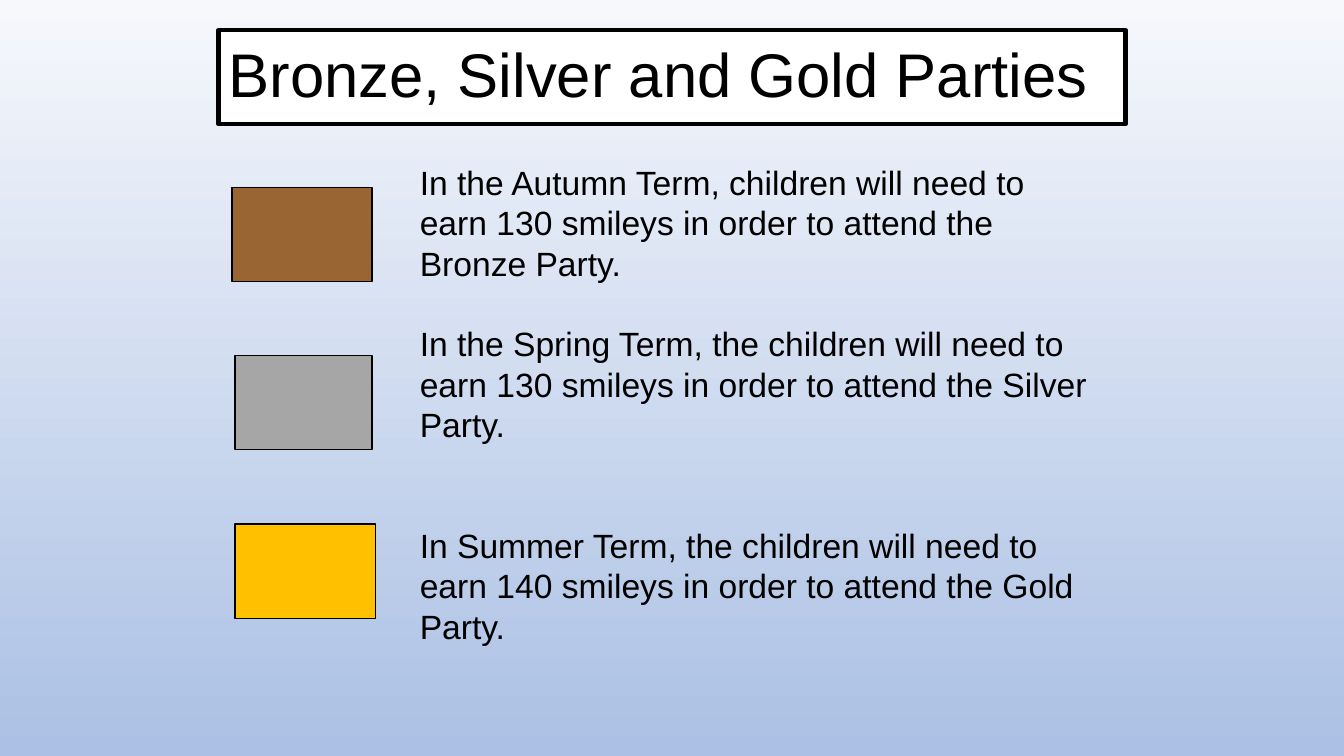
from pptx import Presentation
from pptx import util as u
from pptx.dml.color import RGBColor
from pptx.enum import shapes, text

BLACK = RGBColor(0x00, 0x00, 0x00)
WHITE = RGBColor(0xFF, 0xFF, 0xFF)
BRONZE = RGBColor(0x99, 0x66, 0x33)
SILVER = RGBColor(0xA6, 0xA6, 0xA6)
GOLD = RGBColor(0xFF, 0xC0, 0x00)
SKY_TOP = RGBColor(0xF6, 0xF8, 0xFC)
SKY_BOTTOM = RGBColor(0xAB, 0xC0, 0xE4)

COLUMNS, ROWS = 160, 90
TITLE_ONLY = 5
SWATCH_TOP, SWATCH_PITCH, SWATCH_HEIGHT = 22.3, 20.05, 11.2
BLANK_LINE = 28.8

# colour, left column, width in columns, blank lines above the text, text
PARTIES = [
    (BRONZE, 27.6, 16.7, 0,
     "In the Autumn Term, children will need to earn 130 smileys "
     "in order to attend the Bronze Party."),
    (SILVER, 28, 16.3, 1,
     "In the Spring Term, the children will need to earn 130 smileys "
     "in order to attend the Silver Party."),
    (GOLD, 28, 16.7, 2,
     "In Summer Term, the children will need to earn 140 smileys "
     "in order to attend the Gold Party."),
]


class PartySlide:
    """Style and current slide; every box is (column, row, columns, rows)."""

    font = "Arial"
    title_size = 44
    body_size = 24

    def __init__(self, presentation):
        self.cell_width = presentation.slide_width / COLUMNS
        self.cell_height = presentation.slide_height / ROWS
        self.slide = presentation.slides.add_slide(
            presentation.slide_layouts[TITLE_ONLY])

    def place(self, box):
        """Turn a grid box into left, top, width and height."""
        column, row, columns, rows = box
        return (round(column * self.cell_width), round(row * self.cell_height),
                round(columns * self.cell_width), round(rows * self.cell_height))

    def background(self, top, bottom):
        fill = self.slide.background.fill
        fill.gradient()
        fill.gradient_angle = 270
        for stop, color in zip(fill.gradient_stops, (top, bottom)):
            stop.color.rgb = color

    def paint(self, shape, fill, line_width):
        shape.fill.solid()
        shape.fill.fore_color.rgb = fill
        shape.line.color.rgb = BLACK
        shape.line.width = u.Pt(line_width)

    def add_words(self, paragraph, words, size):
        paragraph.alignment = text.PP_ALIGN.LEFT
        run = paragraph.add_run()
        run.text = words
        run.font.name = self.font
        run.font.size = u.Pt(size)
        run.font.color.rgb = BLACK

    def title(self, box, words):
        shape = self.slide.shapes.title
        shape.left, shape.top, shape.width, shape.height = self.place(box)
        self.paint(shape, WHITE, 3)
        frame = shape.text_frame
        frame.auto_size = text.MSO_AUTO_SIZE.NONE
        frame.vertical_anchor = text.MSO_ANCHOR.MIDDLE
        frame.paragraphs[0].line_spacing = 0.9
        self.add_words(frame.paragraphs[0], words, self.title_size)

    def swatch(self, box, color):
        shape = self.slide.shapes.add_shape(
            shapes.MSO_SHAPE.RECTANGLE, *self.place(box))
        shape.shadow.inherit = False
        self.paint(shape, color, 1)

    def paragraphs(self, box, items):
        """Put (blank lines above, words) items into one text box."""
        frame = self.slide.shapes.add_textbox(*self.place(box)).text_frame
        frame.word_wrap = True
        for index, (blank_lines, words) in enumerate(items):
            paragraph = frame.add_paragraph() if index else frame.paragraphs[0]
            paragraph.space_before = u.Pt(blank_lines * BLANK_LINE)
            self.add_words(paragraph, words, self.body_size)


def main():
    presentation = Presentation()
    presentation.slide_width = u.Inches(13.33)
    presentation.slide_height = u.Inches(7.5)

    party_slide = PartySlide(presentation)
    party_slide.background(SKY_TOP, SKY_BOTTOM)
    party_slide.title((26, 3.6, 108, 11.2), "Bronze, Silver and Gold Parties")
    for index, (color, left, width, _, _) in enumerate(PARTIES):
        top = SWATCH_TOP + index * SWATCH_PITCH
        party_slide.swatch((left, top, width, SWATCH_HEIGHT), color)
    party_slide.paragraphs((48.8, 18.7, 83.2, 64.2),
                           [party[3:] for party in PARTIES])

    presentation.save("out.pptx")


if __name__ == "__main__":
    main()
